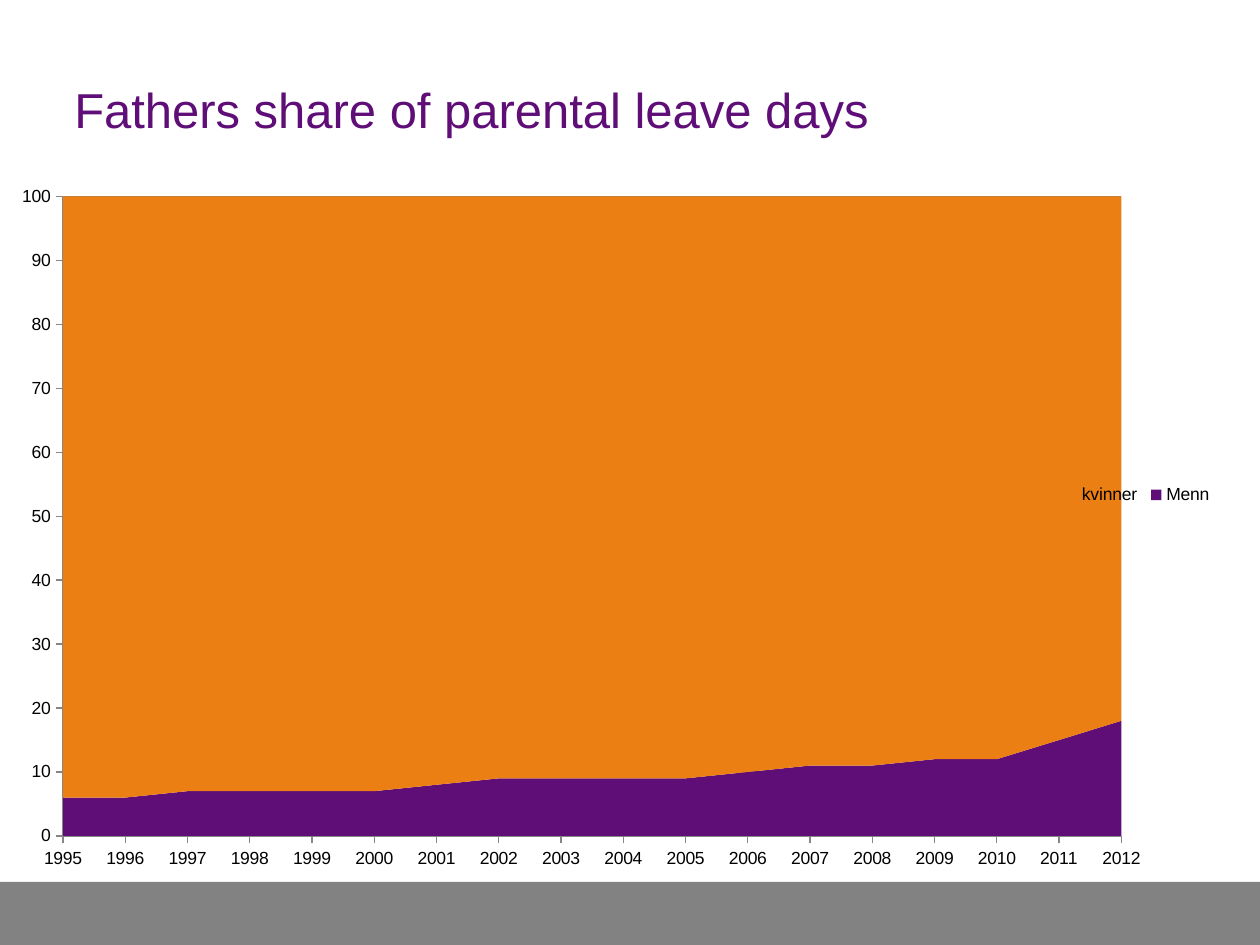
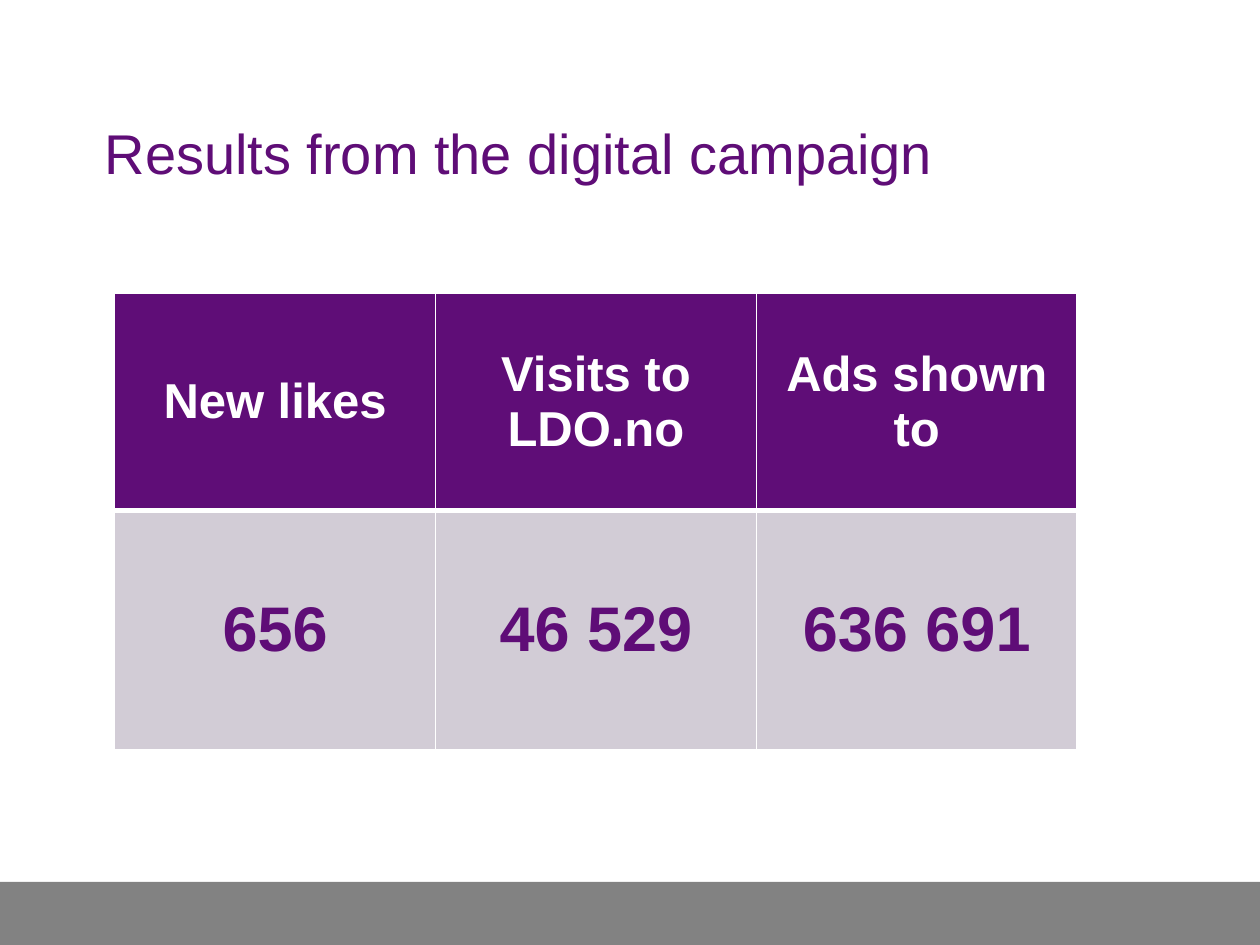
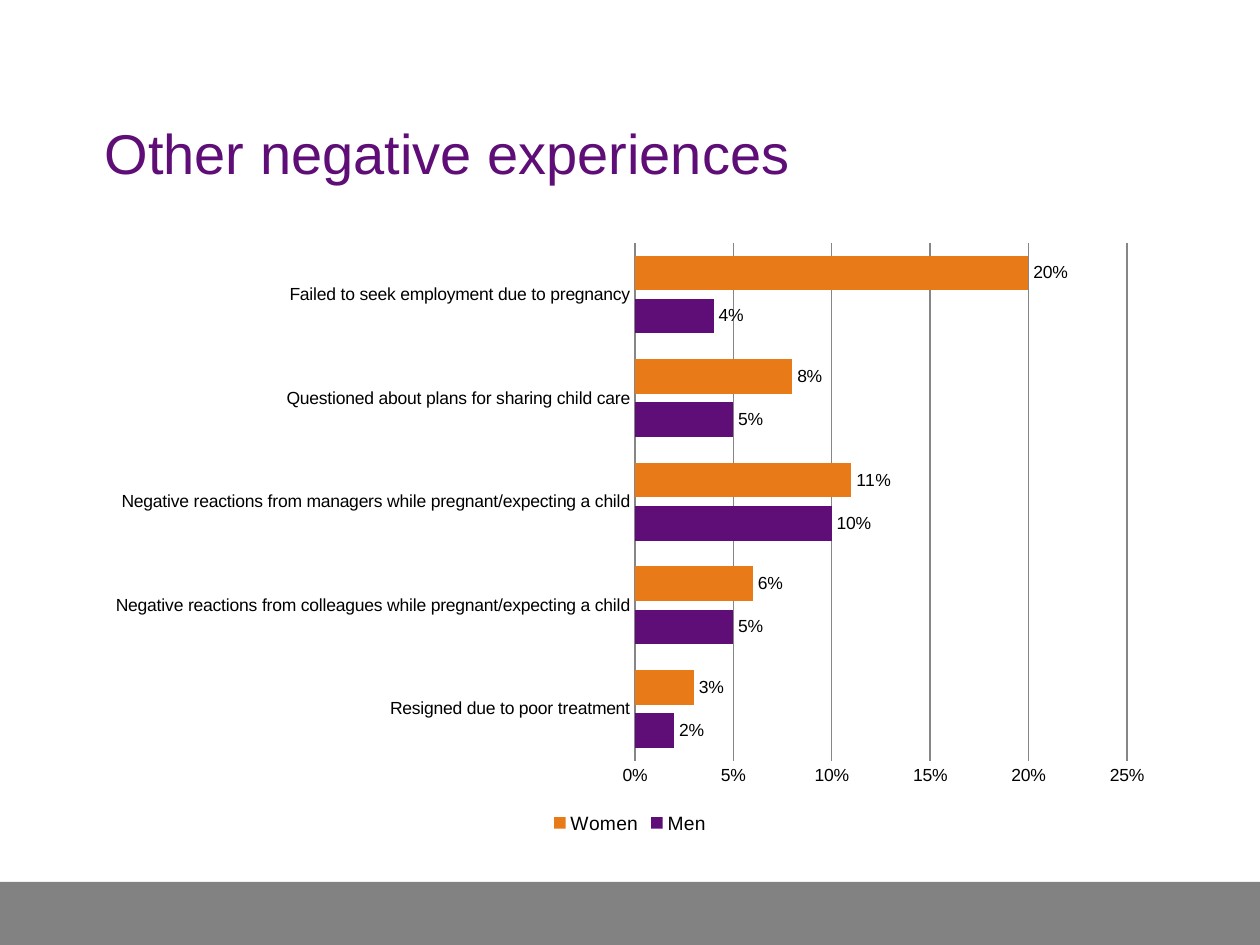
from dataclasses import dataclass

from lxml import etree
from pptx import Presentation, util as u
from pptx.chart.data import CategoryChartData
from pptx.dml.color import RGBColor
from pptx.enum import chart as ch, shapes, text
from pptx.oxml import parse_xml
from pptx.oxml.ns import nsdecls, qn

CELL = u.Inches(0.25)  # the slide is a grid of 40 columns and 30 rows
COLS, ROWS = 40, 30


@dataclass(frozen=True)
class Theme:
    font: str = "Arial"
    plum: str = "5F0D77"
    amber: str = "EB7F14"
    rust: str = "E87A17"
    lilac: str = "D2CCD6"
    band: str = "828282"
    line: str = "868686"
    white: str = "FFFFFF"
    black: str = "000000"
    label: int = 10
    key: int = 11
    small: int = 28
    title: int = 32
    figure: int = 36


T = Theme()
HEAD = (3, 3.32, 34, 3.68)


def grid(*cells):
    return [round(n * CELL) for n in cells]


def rgb(code):
    return RGBColor.from_string(code)


def style(font, size, color, bold=None):
    font.name, font.size, font.bold = T.font, u.Pt(size), bold
    font.color.rgb = rgb(color)


def paint(fill, color):
    fill.solid()
    fill.fore_color.rgb = rgb(color)


def add_band(layout, slide):
    """Make the footer band and hand it to the layout all slides share."""
    band = slide.shapes.add_shape(shapes.MSO_SHAPE.RECTANGLE, *grid(0, 28, COLS, 2))
    band.shadow.inherit = False
    paint(band.fill, T.band)
    band.line.fill.background()
    band.element.nvSpPr.cNvPr.set("id", "99")
    layout.shapes.element.append(band.element)


def add_title(slide, words, box=HEAD, size=T.title):
    head = slide.shapes.title
    head.left, head.top, head.width, head.height = grid(*box)
    frame = head.text_frame
    frame.text = words
    frame.word_wrap = True
    frame.auto_size = text.MSO_AUTO_SIZE.NONE
    frame.vertical_anchor = text.MSO_ANCHOR.TOP
    frame.margin_left = frame.margin_right = u.Inches(0.08)
    frame.margin_top = u.Inches(0.11)
    para = frame.paragraphs[0]
    para.alignment = text.PP_ALIGN.LEFT
    style(para.font, size, T.plum)


def pin(parent, place, inner=False):
    """Fix a chart part at shares (x, y, w, h) of the chart."""
    for old in parent.findall(qn("c:layout")):
        parent.remove(old)
    x, y, w, h = place
    target = '<c:layoutTarget val="inner"/>' if inner else ""
    layout = parse_xml(
        f'<c:layout {nsdecls("c")}><c:manualLayout>{target}'
        '<c:xMode val="edge"/><c:yMode val="edge"/>'
        f'<c:x val="{x}"/><c:y val="{y}"/><c:w val="{w}"/><c:h val="{h}"/>'
        "</c:manualLayout></c:layout>")
    parent.insert(0 if inner else 1, layout)


def add_chart(slide, kind, box, names, series, tick, legend, form="General"):
    """Add a chart; series holds (name, values, colour) triples."""
    data = CategoryChartData(number_format=form)
    data.categories = names
    for name, vals, _ in series:
        data.add_series(name, vals)
    chart = slide.shapes.add_chart(kind, *grid(*box), data).chart
    style(chart.font, T.label, T.black)
    chart.has_title = False
    chart.has_legend = True
    chart.legend.position = legend
    chart.legend.include_in_layout = False
    chart.plots[0].vary_by_categories = False
    for ser, (_, _, color) in zip(chart.plots[0].series, series):
        paint(ser.format.fill, color)
    for axis in (chart.category_axis, chart.value_axis):
        axis.major_tick_mark = tick
        axis.minor_tick_mark = ch.XL_TICK_MARK.NONE
        axis.format.line.color.rgb = rgb(T.line)
    axis.has_major_gridlines = True
    axis.major_gridlines.format.line.color.rgb = rgb(T.line)
    axis.tick_labels.number_format = form
    axis.tick_labels.number_format_is_linked = False
    return chart


def leave_share(slide):
    add_title(slide, "Fathers share of parental leave days",
              (2.04, 2.08, 34, 2.84), T.small)
    men = [6, 6, 7, 7, 7, 7, 8, 9, 9, 9, 9, 10, 11, 11, 12, 12, 15, 18]
    women = [100 - share for share in men]
    years = [str(year) for year in range(1995, 2013)]
    chart = add_chart(
        slide, ch.XL_CHART_TYPE.AREA_STACKED, (0, 5.56, COLS, 22.56), years,
        [("Menn ", men, T.plum), ("kvinner", women, T.amber)],
        ch.XL_TICK_MARK.OUTSIDE, ch.XL_LEGEND_POSITION.RIGHT)
    chart.value_axis.minimum_scale = 0
    chart.value_axis.maximum_scale = 100
    chart.value_axis.major_unit = 10
    pin(chart.element.chart.plotArea, (0.05, 0.03, 0.84, 0.9), inner=True)
    pin(chart.legend._element, (0.84, 0.43, 0.13, 0.04))


def rule(cell, bottom):
    """Draw white cell borders, the lower one as wide as given."""
    props = cell._tc.get_or_add_tcPr()
    for side, width in (("L", 1), ("R", 1), ("T", 1), ("B", bottom)):
        edge = etree.SubElement(props, qn(f"a:ln{side}"), w=str(u.Pt(width)))
        fill = etree.SubElement(edge, qn("a:solidFill"))
        etree.SubElement(fill, qn("a:srgbClr"), val=T.white)


def campaign(slide):
    add_title(slide, "Results from the digital campaign")
    rows = [
        (["New likes", "Visits to LDO.no", "Ads shown to"],
         6.88, T.plum, T.small, T.white, 3),
        (["656", "46 529", "636 691"], 7.6, T.lilac, T.figure, T.plum, 1),
    ]
    table = slide.shapes.add_table(2, 3, *grid(3.64, 9.32, 30.56, 14.48)).table
    for r, (words, high, fill, size, ink, edge) in enumerate(rows):
        table.rows[r].height = grid(high)[0]
        for cell, word in zip(table.rows[r].cells, words):
            cell.text = word
            cell.vertical_anchor = text.MSO_ANCHOR.MIDDLE
            rule(cell, 3 if edge == 3 or r == 0 else edge)
            paint(cell.fill, fill)
            para = cell.text_frame.paragraphs[0]
            para.alignment = text.PP_ALIGN.CENTER
            style(para.font, size, ink, True)
    for cell in table.rows[1].cells:
        top = cell._tc.tcPr.find(qn("a:lnT"))
        top.set("w", str(u.Pt(3)))


def setbacks(slide):
    add_title(slide, "Other negative experiences")
    names = [
        "Resigned due to poor treatment",
        "Negative reactions from colleagues while pregnant/expecting a child",
        "Negative reactions from managers while pregnant/expecting a child",
        "Questioned about plans for sharing child care",
        "Failed to seek employment due to pregnancy",
    ]
    chart = add_chart(
        slide, ch.XL_CHART_TYPE.BAR_CLUSTERED, (3, 7.32, 34, 19.32), names,
        [("Men", [0.02, 0.05, 0.1, 0.05, 0.04], T.plum),
         ("Women", [0.03, 0.06, 0.11, 0.08, 0.2], T.rust)],
        ch.XL_TICK_MARK.NONE, ch.XL_LEGEND_POSITION.BOTTOM, "0%")
    style(chart.legend.font, T.key, T.black)
    chart.value_axis.format.line.fill.background()
    plot = chart.plots[0]
    plot.gap_width, plot.overlap = 75, -25
    for ser in plot.series:
        tags = ser.data_labels
        tags.show_value = True
        tags.number_format = "0%"
        tags.number_format_is_linked = False
        tags.position = ch.XL_LABEL_POSITION.OUTSIDE_END


def main():
    deck = Presentation()
    deck.slide_width, deck.slide_height = grid(COLS, ROWS)
    layout = deck.slide_layouts.get_by_name("Title Only")
    for draw in (leave_share, campaign, setbacks):
        slide = deck.slides.add_slide(layout)
        if draw is leave_share:
            add_band(layout, slide)
        draw(slide)
    deck.save("out.pptx")


if __name__ == "__main__":
    main()
